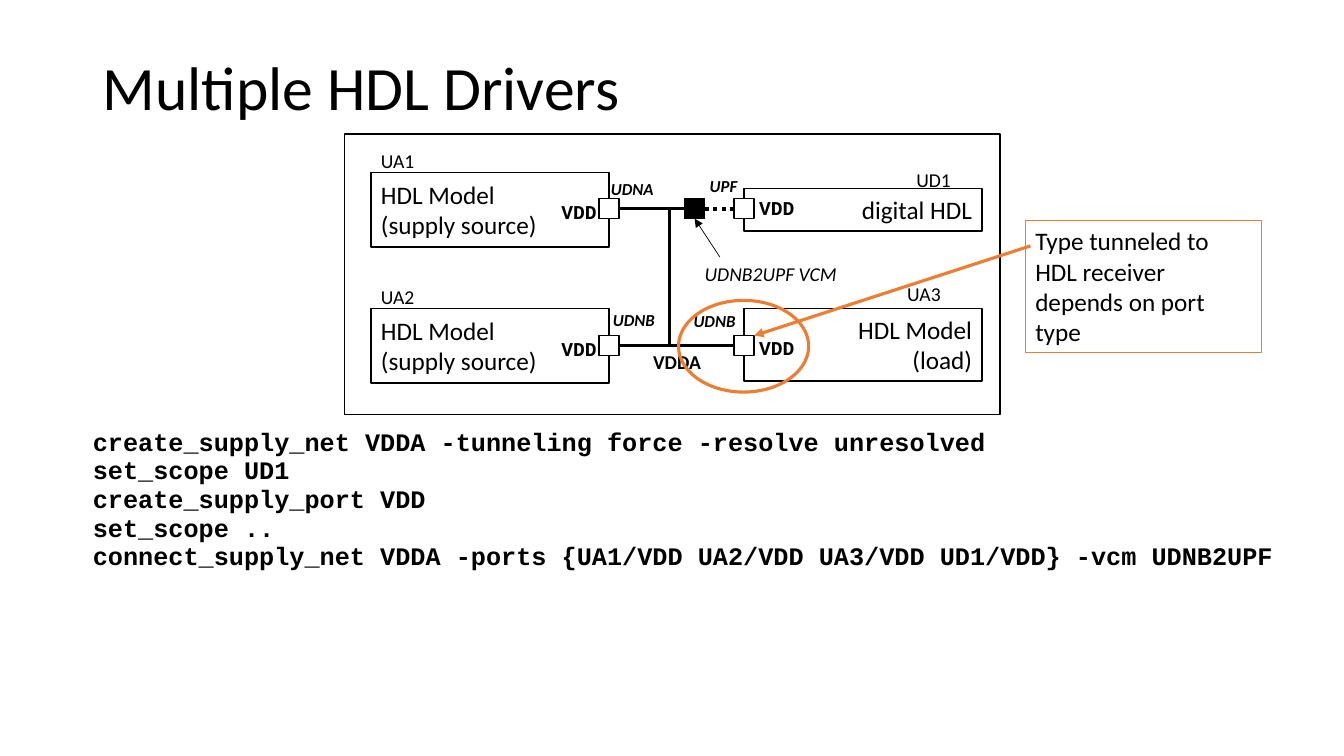
from dataclasses import dataclass

from lxml.etree import SubElement
from pptx import Presentation
from pptx.dml.color import RGBColor
from pptx.enum.dml import MSO_LINE
from pptx.enum.shapes import MSO_CONNECTOR, MSO_SHAPE
from pptx.enum.text import MSO_ANCHOR, MSO_AUTO_SIZE, PP_ALIGN
from pptx.oxml.ns import qn
from pptx.shapes.autoshape import Shape
from pptx.shapes.connector import Connector
from pptx.slide import Slide
from pptx.util import Inches, Pt

BLACK, WHITE, ORANGE = "000000", "FFFFFF", "ED7D31"
SANS, MONO = "Calibri", "Courier New"
TOP, LEFT, BOTTOM, RIGHT = range(4)
PORT_SIZE = 0.2
BLOCK_WIDTH = 2.36
SOURCE_LEFT, LOAD_LEFT = 3.68, 7.38
TOP_WIRE, BOTTOM_WIRE = 2.07, 3.43

CODE = [
    "create_supply_net VDDA -tunneling force -resolve unresolved",
    "set_scope UD1",
    "create_supply_port VDD",
    "set_scope ..",
    "connect_supply_net VDDA -ports {UA1/VDD UA2/VDD UA3/VDD UD1/VDD} -vcm UDNB2UPF",
]


@dataclass
class Block:
    name: str
    lines: list[str]
    left: float
    top: float
    height: float
    wire: float
    name_left: float
    name_top: float
    pin_top: float

    @property
    def is_source(self) -> bool:
        return self.left == SOURCE_LEFT


@dataclass
class Label:
    text: str
    left: float
    top: float
    width: float = 0.84
    height: float = 0.34
    size: float = 14
    bold: bool = False
    italic: bool = False
    font: str = SANS


SOURCE_LINES = ["HDL Model", "(supply source)"]
BLOCKS = [
    Block("UA1", SOURCE_LINES, SOURCE_LEFT, 1.71, 0.74, TOP_WIRE, 3.68, 1.43, 1.93),
    Block("UA3", ["HDL Model", "(load)"], LOAD_LEFT, 3.06, 0.72, BOTTOM_WIRE, 8.9, 2.75, 3.28),
    Block("UD1", ["digital HDL"], LOAD_LEFT, 1.87, 0.42, TOP_WIRE, 8.99, 1.62, 1.89),
    Block("UA2", SOURCE_LINES, SOURCE_LEFT, 3.06, 0.74, BOTTOM_WIRE, 3.68, 2.78, 3.29),
]
NET_TYPES = [("UDNA", 5.96, 1.72), ("UDNB", 6.78, 3.03), ("UPF", 6.94, 1.69), ("UDNB", 5.98, 3.02)]
LABELS = [Label(text, left, top, 0.79, 0.3, 12, True, True) for text, left, top in NET_TYPES] + [
    Label("VDDA", 6.38, 3.42, bold=True),
    Label("UDNB2UPF VCM", 6.89, 2.55, width=1.93, italic=True),
]


def color(value: str) -> RGBColor:
    return RGBColor.from_string(value)


def place(shape: Shape, left: float, top: float, width: float, height: float) -> None:
    shape.left, shape.top = Inches(left), Inches(top)
    shape.width, shape.height = Inches(width), Inches(height)


def write(shape: Shape, lines: list[str], size: float, font: str = SANS, bold: bool = False,
          italic: bool = False, align: PP_ALIGN = PP_ALIGN.LEFT) -> None:
    """Fill the shape with one paragraph per line, all in the same style."""
    frame = shape.text_frame
    frame.word_wrap = True
    frame.text = "\n".join(lines)
    for paragraph in frame.paragraphs:
        paragraph.alignment = align
        paragraph.font.name = font
        paragraph.font.size = Pt(size)
        paragraph.font.bold = bold
        paragraph.font.italic = italic
        paragraph.font.color.rgb = color(BLACK)


def add_outline(slide: Slide, left: float, top: float, width: float, height: float,
                fill: str | None = None, line: str = BLACK, weight: float = 1,
                preset: MSO_SHAPE = MSO_SHAPE.RECTANGLE) -> Shape:
    shape = slide.shapes.add_shape(preset, Inches(left), Inches(top), Inches(width), Inches(height))
    shape.shadow.inherit = False
    if fill is None:
        shape.fill.background()
    else:
        shape.fill.solid()
        shape.fill.fore_color.rgb = color(fill)
    shape.line.color.rgb = color(line)
    shape.line.width = Pt(weight)
    return shape


def add_label(slide: Slide, label: Label) -> None:
    box = slide.shapes.add_textbox(Inches(label.left), Inches(label.top),
                                   Inches(label.width), Inches(label.height))
    write(box, [label.text], label.size, label.font, label.bold, label.italic)


def add_port(slide: Slide, center: float, wire: float, fill: str = WHITE) -> Shape:
    return add_outline(slide, center - PORT_SIZE / 2, wire - PORT_SIZE / 2, PORT_SIZE, PORT_SIZE, fill)


def add_block(slide: Slide, block: Block) -> Shape:
    """Draw a model with its name, pin label and port, and return the port."""
    body = add_outline(slide, block.left, block.top, BLOCK_WIDTH, block.height)
    body.text_frame.vertical_anchor = MSO_ANCHOR.MIDDLE
    write(body, block.lines, 18, align=PP_ALIGN.LEFT if block.is_source else PP_ALIGN.RIGHT)
    port_center = block.left + BLOCK_WIDTH if block.is_source else block.left
    port = add_port(slide, port_center, block.wire)
    pin_left = port_center - 0.57 if block.is_source else port_center + 0.05
    add_label(slide, Label(block.name, block.name_left, block.name_top))
    add_label(slide, Label("VDD", pin_left, block.pin_top, width=0.59, bold=True, font=MONO))
    return port


def add_line(slide: Slide, start: tuple[float, float] = (0, 0), end: tuple[float, float] = (0, 0),
             line: str = BLACK, weight: float = 2.25, arrow: bool = False) -> Connector:
    connector = slide.shapes.add_connector(MSO_CONNECTOR.STRAIGHT, Inches(start[0]), Inches(start[1]),
                                           Inches(end[0]), Inches(end[1]))
    connector.line.color.rgb = color(line)
    connector.line.width = Pt(weight)
    if arrow:
        SubElement(connector.line._get_or_add_ln(), qn("a:tailEnd"), type="triangle")
    SubElement(connector._element.spPr, qn("a:effectLst"))
    return connector


def add_wire(slide: Slide, source: Shape, target: Shape, weight: float = 2.25) -> Connector:
    wire = add_line(slide, weight=weight)
    wire.begin_connect(source, RIGHT)
    wire.end_connect(target, LEFT)
    return wire


def add_title_and_code(slide: Slide) -> None:
    title, code = slide.placeholders
    place(title, 0.92, 0.4, 11.5, 1)
    write(title, ["Multiple HDL Drivers"], 44)
    title.text_frame.vertical_anchor = MSO_ANCHOR.MIDDLE
    title.text_frame.paragraphs[0].line_spacing = 0.9

    place(code, 0.82, 4.21, 12.23, 1.97)
    code.text_frame.text = "\n".join(CODE)
    for paragraph in code.text_frame.paragraphs:
        properties = paragraph._p.get_or_add_pPr()
        properties.set("marL", "0")
        properties.set("indent", "0")
        paragraph.line_spacing = 0.9
        paragraph.space_before = Pt(0)
        paragraph.space_after = Pt(1)
        SubElement(properties, qn("a:buNone"))
        paragraph.font.name = MONO
        paragraph.font.size = Pt(18)
        paragraph.font.bold = True
        paragraph.font.color.rgb = color(BLACK)
    for placeholder in (title, code):
        placeholder.text_frame.auto_size = MSO_AUTO_SIZE.NONE


def add_diagram(slide: Slide) -> None:
    add_outline(slide, 3.42, 1.33, 6.5, 2.78)
    ports = {block.name: add_block(slide, block) for block in BLOCKS}
    converter = add_port(slide, 6.89, TOP_WIRE, BLACK)
    for label in LABELS:
        add_label(slide, label)

    add_wire(slide, ports["UA1"], converter)
    add_wire(slide, ports["UA2"], ports["UA3"])
    add_wire(slide, converter, ports["UD1"], 3).line.dash_style = MSO_LINE.ROUND_DOT
    add_line(slide, (6.64, TOP_WIRE), (6.64, BOTTOM_WIRE))
    pointer = add_line(slide, (7.14, 2.55), (6.89, 2.17), weight=0.5, arrow=True)
    pointer.end_connect(converter, BOTTOM)


def add_callout(slide: Slide) -> None:
    add_outline(slide, 6.73, 2.98, 1.29, 0.91, line=ORANGE, weight=2.25, preset=MSO_SHAPE.OVAL)
    add_line(slide, (10.22, 2.44), (7.48, 3.33), ORANGE, arrow=True)
    note = add_outline(slide, 10.17, 2.19, 2.34, 1.31, line=ORANGE, weight=0.75)
    note.text_frame.vertical_anchor = MSO_ANCHOR.TOP
    write(note, ["Type tunneled to HDL receiver depends on port type"], 18)


def main() -> None:
    presentation = Presentation()
    presentation.slide_width, presentation.slide_height = Inches(13.33), Inches(7.5)
    slide = presentation.slides.add_slide(presentation.slide_layouts[1])
    add_title_and_code(slide)
    add_diagram(slide)
    add_callout(slide)
    presentation.save("out.pptx")


if __name__ == "__main__":
    main()
